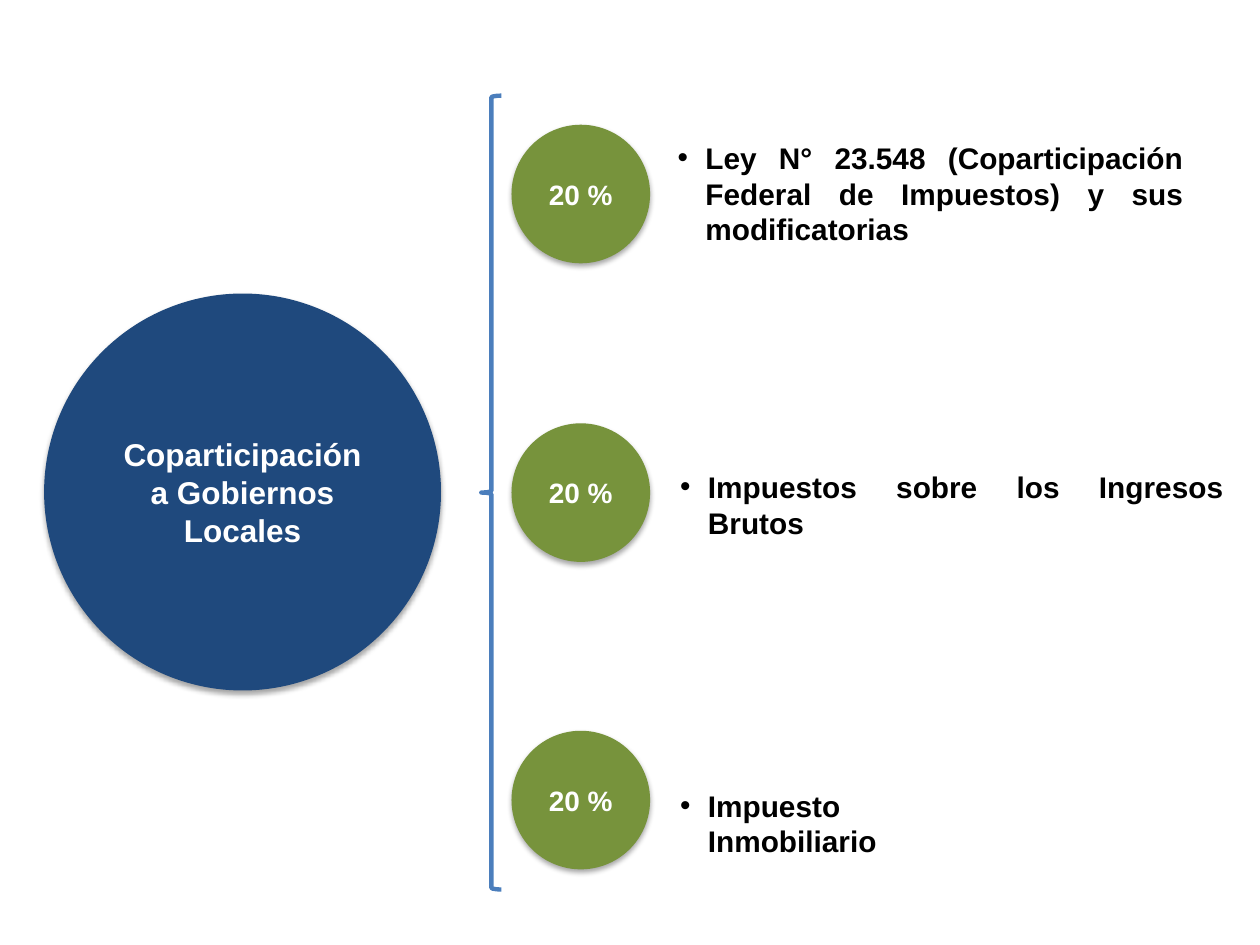
from dataclasses import dataclass

from lxml import etree
from pptx import Presentation, util as u
from pptx.dml.color import RGBColor
from pptx.enum import shapes, text
from pptx.oxml.ns import qn

COLUMNS, ROWS = 100, 75


@dataclass(frozen=True)
class Theme:
    """Colours, type sizes and font of the slide."""
    font: str = "Arial"
    ink: str = "000000"
    paper: str = "FFFFFF"
    topic: str = "1F497D"
    share: str = "77933C"
    brace: str = "4B7EBC"
    topic_size: int = 18
    share_size: int = 16
    source_size: int = 17
    brace_width: float = 2.5


@dataclass(frozen=True)
class Box:
    """An area measured in grid columns and rows."""
    left: float
    top: float
    width: float
    height: float

    def emu(self, deck):
        """Return the area as slide lengths."""
        column, row = deck.slide_width / COLUMNS, deck.slide_height / ROWS
        return [round(n * unit) for n, unit in
                zip((self.left, self.top, self.width, self.height),
                    (column, row, column, row))]


THEME = Theme()
TOPIC = Box(3.5, 23.3, 31.5, 31.5)
BRACE = Box(38.2, 7.6, 1.6, 63)
SHARE_LEFT, SHARE_SIZE = 40.6, 11
SOURCES = [
    (9.9, "20 %", Box(52.8, 10.6, 42.1, 9.6),
     "Ley N° 23.548 (Coparticipación Federal de Impuestos) y sus modificatorias"),
    (33.6, "20 %", Box(53, 36.7, 45.1, 3.9), "Impuestos sobre los Ingresos Brutos"),
    (58, "20 %", Box(53, 62, 27.7, 3.9), "Impuesto Inmobiliario"),
]


def add_shadow(shape):
    """Give a shape a soft shadow below it."""
    shape.shadow.inherit = False
    effects = shape._element.spPr.find(qn("a:effectLst"))
    shadow = etree.SubElement(
        effects, qn("a:outerShdw"), blurRad=str(u.Pt(3.1)), dist=str(u.Pt(1.8)),
        dir="5400000", rotWithShape="0")
    colour = etree.SubElement(shadow, qn("a:srgbClr"), val="000000")
    etree.SubElement(colour, qn("a:alpha"), val="35000")


def write(frame, words, size, colour, align):
    """Fill a frame with one bold paragraph."""
    frame.word_wrap = True
    frame.text = words
    para = frame.paragraphs[0]
    para.alignment = align
    for span in para.runs:
        span.font.name = THEME.font
        span.font.size = u.Pt(size)
        span.font.bold = True
        span.font.color.rgb = RGBColor.from_string(colour)
    return para


def add_circle(deck, page, box, words, size, colour):
    """Place a shadowed circle with centred words."""
    circle = page.shapes.add_shape(shapes.MSO_SHAPE.OVAL, *box.emu(deck))
    circle.fill.solid()
    circle.fill.fore_color.rgb = RGBColor.from_string(colour)
    circle.line.fill.background()
    add_shadow(circle)
    circle.text_frame.vertical_anchor = text.MSO_ANCHOR.MIDDLE
    write(circle.text_frame, words, size, THEME.paper, text.PP_ALIGN.CENTER)


def add_brace(deck, page, box):
    """Place the brace that gathers the sources."""
    brace = page.shapes.add_shape(shapes.MSO_SHAPE.LEFT_BRACE, *box.emu(deck))
    brace.shadow.inherit = False
    brace.fill.background()
    brace.line.color.rgb = RGBColor.from_string(THEME.brace)
    brace.line.width = u.Pt(THEME.brace_width)


def add_source(deck, page, box, words):
    """Place a bulleted, justified source of funds."""
    frame = page.shapes.add_textbox(*box.emu(deck)).text_frame
    para = write(frame, words, THEME.source_size, THEME.ink, text.PP_ALIGN.JUSTIFY)
    frame.auto_size = text.MSO_AUTO_SIZE.SHAPE_TO_FIT_TEXT
    indent = u.Inches(0.22)
    props = para._p.get_or_add_pPr()
    props.set("marL", str(indent))
    props.set("indent", str(-indent))
    etree.SubElement(props, qn("a:buFont"), typeface=THEME.font)
    etree.SubElement(props, qn("a:buChar"), char="•")


def build_slide(deck):
    """Lay out the topic, the brace and the rows of sources."""
    page = deck.slides.add_slide(deck.slide_layouts[6])
    add_brace(deck, page, BRACE)
    for top, share, box, words in SOURCES:
        add_circle(deck, page, Box(SHARE_LEFT, top, SHARE_SIZE, SHARE_SIZE),
                   share, THEME.share_size, THEME.share)
        add_source(deck, page, box, words)
    add_circle(deck, page, TOPIC, "Coparticipación a Gobiernos Locales",
               THEME.topic_size, THEME.topic)


def main():
    """Build and save the deck."""
    deck = Presentation()
    deck.slide_width, deck.slide_height = u.Inches(10), u.Inches(7.5)
    build_slide(deck)
    deck.save("out.pptx")


if __name__ == "__main__":
    main()
